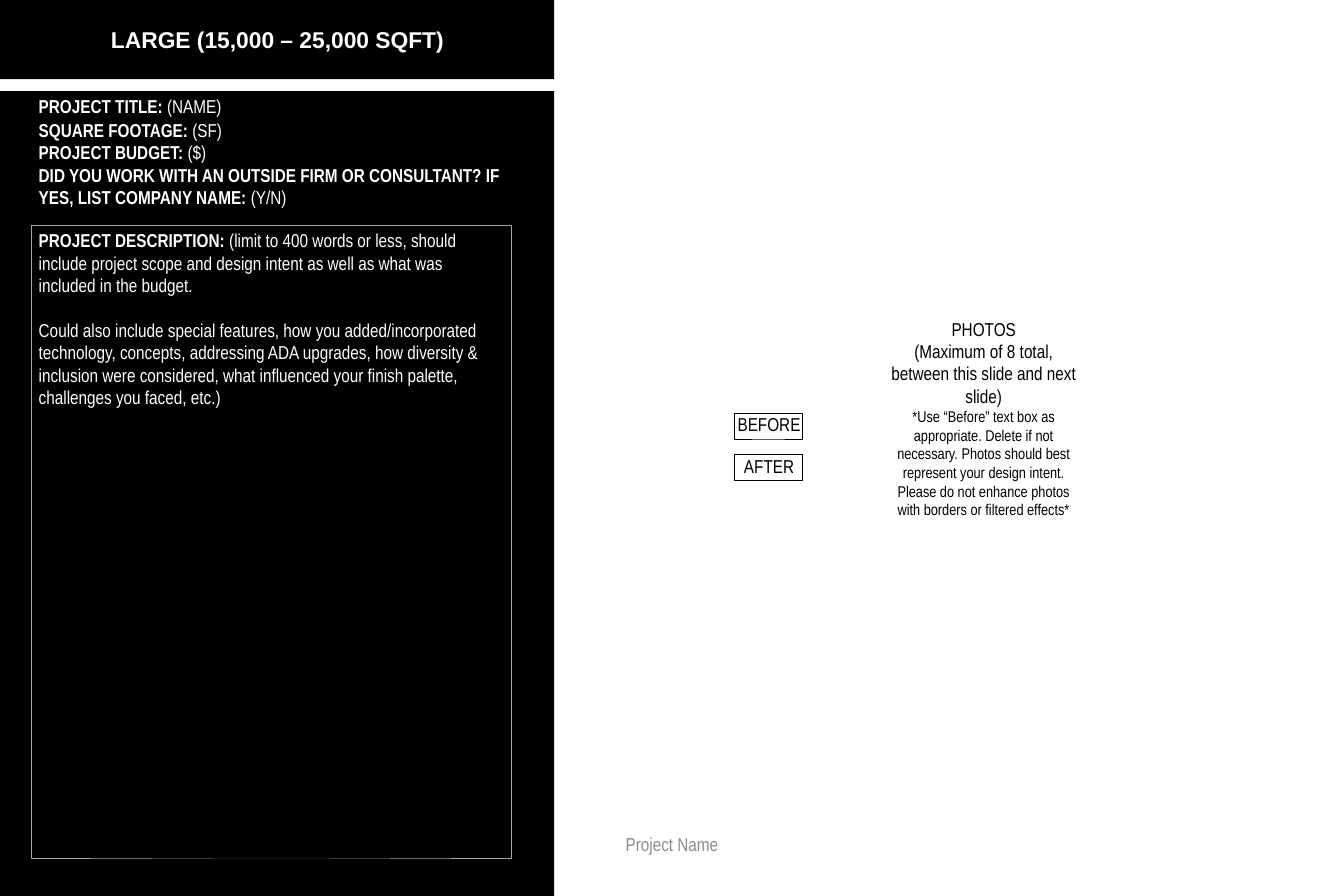
from dataclasses import dataclass

from pptx import Presentation
from pptx.dml.color import RGBColor
from pptx.enum.shapes import MSO_SHAPE
from pptx.enum.text import MSO_ANCHOR, PP_ALIGN
from pptx.util import Inches, Pt


@dataclass(frozen=True)
class Theme:
    black: str = "000000"
    white: str = "FFFFFF"
    frame: str = "A6A6A6"
    footer: str = "8C8C8C"
    heading_font: str = "Arial"
    body_font: str = "Arial Narrow"
    heading: int = 22
    body: int = 18
    note: int = 15


THEME = Theme()

# A paragraph is a list of (text, bold) spans.
HEADING = [[("LARGE (15,000 – 25,000 SQFT)", True)]]
PROJECT_TITLE = [[("PROJECT TITLE: ", True), ("(NAME)", False)]]
PROJECT_FACTS = [
    [("SQUARE FOOTAGE: ", True), ("(SF)", False)],
    [("PROJECT BUDGET: ", True), ("($)", False)],
    [("DID YOU WORK WITH AN OUTSIDE FIRM OR CONSULTANT? IF YES, LIST COMPANY NAME: ", True),
     ("(Y/N)", False)],
]
DESCRIPTION = [
    [("PROJECT DESCRIPTION: ", True),
     ("(limit to 400 words or less, should include project scope and design intent "
      "as well as what was included in the budget.", False)],
    [("Could also include special features, how you added/incorporated technology, "
      "concepts, addressing ADA upgrades, how diversity & inclusion were considered, "
      "what influenced your finish palette, challenges you faced, etc.)", False)],
]
PHOTOS = [
    [("PHOTOS", False)],
    [("(Maximum of 8 total, between this slide and next slide)", False)],
    [("*Use “Before” text box as appropriate. Delete if not necessary. Photos should best "
      "represent your design intent. Please do not enhance photos with borders or "
      "filtered effects*", False)],
]
PHOTO_LABELS = ["BEFORE", "AFTER"]
FOOTER = [[("Project Name", False)]]

# Grid of 18 columns and 12 rows; places are left, top, width, height in grid units.
COLUMNS, ROWS = 18, 12
SIDEBAR = 7.42
HEADER_BOTTOM, BODY_TOP = 1.06, 1.22
TEXT_LEFT, TEXT_WIDTH = 0.42, 6.42
LABEL_LEFT, LABEL_TOP, LABEL_WIDTH, LABEL_HEIGHT, LABEL_STEP = 9.83, 5.53, 0.92, 0.35, 0.56
TEXT_INSETS = (0.1, 0.05, 0.1, 0.05)
LABEL_INSETS = (0.02, 0, 0, 0)

deck = Presentation()
deck.slide_width, deck.slide_height = Inches(18), Inches(12)
page = deck.slides.add_slide(deck.slide_layouts[6])


def on_grid(left, top, width, height):
    column, row = deck.slide_width / COLUMNS, deck.slide_height / ROWS
    return round(left * column), round(top * row), round(width * column), round(height * row)


def add_rectangle(place, fill=None, line=None, weight=0.75):
    box = page.shapes.add_shape(MSO_SHAPE.RECTANGLE, *on_grid(*place))
    box.shadow.inherit = False
    if fill:
        box.fill.solid()
        box.fill.fore_color.rgb = RGBColor.from_string(fill)
    else:
        box.fill.background()
    if line:
        box.line.color.rgb = RGBColor.from_string(line)
        box.line.width = Pt(weight)
    else:
        box.line.fill.background()
    return box


def add_text_box(place):
    return page.shapes.add_textbox(*on_grid(*place))


def write(box, paragraphs, color, align=PP_ALIGN.LEFT, insets=TEXT_INSETS,
          size=THEME.body, font=THEME.body_font):
    """Fill the box with paragraphs and return them for further styling."""
    frame = box.text_frame
    frame.word_wrap = True
    frame.vertical_anchor = MSO_ANCHOR.TOP
    (frame.margin_left, frame.margin_top,
     frame.margin_right, frame.margin_bottom) = map(Inches, insets)
    for index, spans in enumerate(paragraphs):
        para = frame.add_paragraph() if index else frame.paragraphs[0]
        para.alignment = align
        para.font.name, para.font.size = font, Pt(size)
        para.font.color.rgb = RGBColor.from_string(color)
        for text, bold in spans:
            span = para.add_run()
            span.text = text
            span.font.bold = bold
    return frame.paragraphs


add_rectangle((0, 0, SIDEBAR, HEADER_BOTTOM), fill=THEME.black)
add_rectangle((0, BODY_TOP, SIDEBAR, ROWS - BODY_TOP), fill=THEME.black)

write(add_text_box((6.12, 11.16, 5.76, 0.6)), FOOTER, THEME.footer,
      PP_ALIGN.CENTER, (0, 0, 0, 0))

photo_paragraphs = write(add_text_box((11.83, 4.25, 2.67, 2.92)), PHOTOS, THEME.black,
                         PP_ALIGN.CENTER, LABEL_INSETS)
photo_paragraphs[-1].font.size = Pt(THEME.note)

write(add_text_box((0.29, 0.3, 6.85, 0.47)), HEADING, THEME.white, PP_ALIGN.CENTER,
      size=THEME.heading, font=THEME.heading_font)
write(add_text_box((TEXT_LEFT, BODY_TOP, TEXT_WIDTH, 0.71)), PROJECT_TITLE, THEME.white)
write(add_text_box((TEXT_LEFT, 1.54, TEXT_WIDTH, 1.31)), PROJECT_FACTS, THEME.white)

description_box = add_rectangle((TEXT_LEFT, 3.02, TEXT_WIDTH, 8.47),
                                line=THEME.frame, weight=0.25)
description_paragraphs = write(description_box, DESCRIPTION, THEME.white)
description_paragraphs[-1].space_before = Pt(21.6)

for index, label in enumerate(PHOTO_LABELS):
    label_top = LABEL_TOP + index * LABEL_STEP
    label_box = add_rectangle((LABEL_LEFT, label_top, LABEL_WIDTH, LABEL_HEIGHT),
                              line=THEME.black)
    write(label_box, [[(label, False)]], THEME.black, PP_ALIGN.CENTER, LABEL_INSETS)

deck.save("out.pptx")
